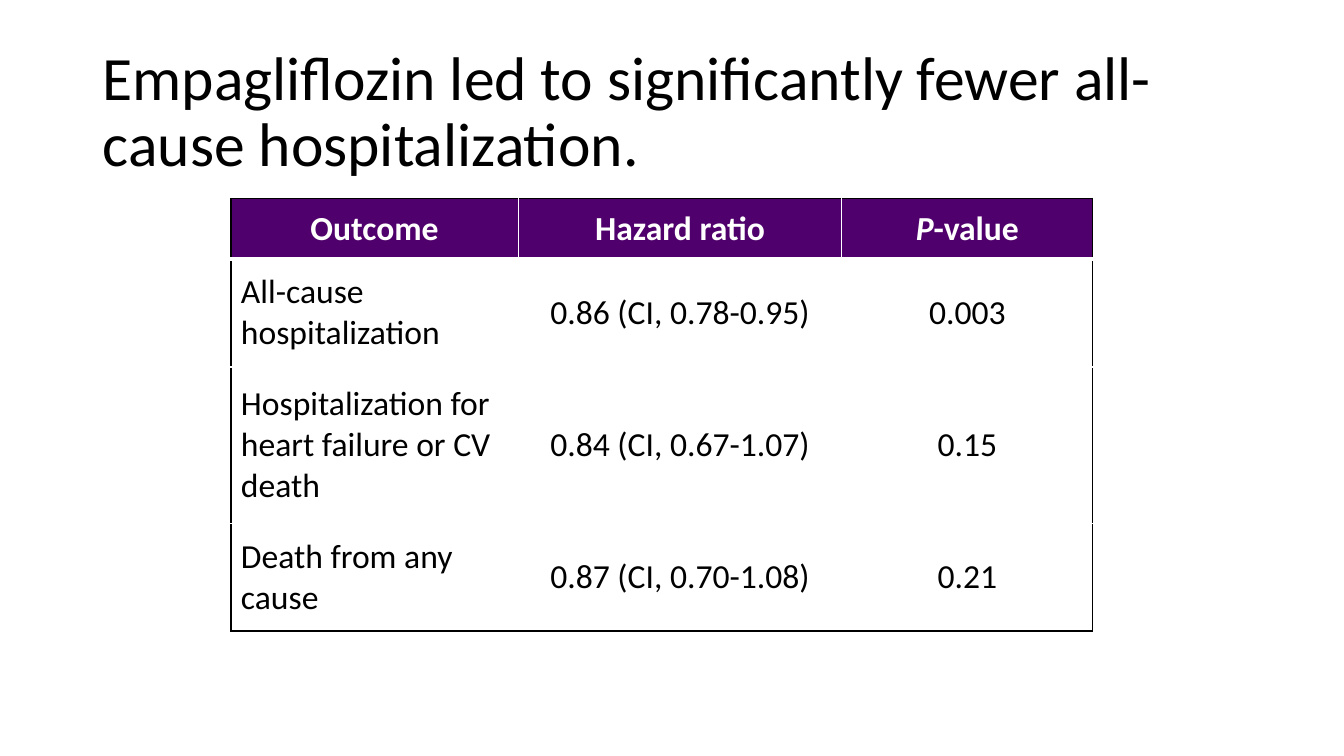
"""Build a slide with a table of empagliflozin trial outcomes."""
import pptx
import pptx.dml.color
import pptx.enum.text
import pptx.oxml
import pptx.oxml.ns
import pptx.util

THEME = {
    "font": "Calibri",
    "title": 44,
    "body": 24,
    "black": "000000",
    "white": "FFFFFF",
    "purple": "50006C",
}
ALIGN = pptx.enum.text.PP_ALIGN
MIDDLE = pptx.enum.text.MSO_ANCHOR.MIDDLE


def add_text(p, text, size=THEME["body"], color=THEME["black"],
             bold=False, italic=False, align=ALIGN.LEFT):
    p.alignment = align
    r = p.add_run()
    r.text = text
    r.font.name = THEME["font"]
    r.font.size = pptx.util.Pt(size)
    r.font.bold = bold
    r.font.italic = italic
    r.font.color.rgb = pptx.dml.color.RGBColor.from_string(color)


def add_border(cell, side, color, points):
    width = pptx.util.Pt(points)
    cell._tc.get_or_add_tcPr().append(pptx.oxml.parse_xml(
        f'<a:ln{side} {pptx.oxml.ns.nsdecls("a")} w="{width}"><a:solidFill>'
        f'<a:srgbClr val="{color}"/></a:solidFill></a:ln{side}>'))


prs = pptx.Presentation()
prs.slide_width = pptx.util.Inches(13.33)
prs.slide_height = pptx.util.Inches(7.5)
px = prs.slide_width / 100
py = prs.slide_height / 100
slide = prs.slides.add_slide(prs.slide_layouts[6])

sp = slide.shapes.add_textbox(int(6.9 * px), int(5.33 * py),
                              int(85.75 * px), int(19.33 * py))
tf = sp.text_frame
tf.word_wrap = True
tf.vertical_anchor = MIDDLE
tf.paragraphs[0].line_spacing = 0.9
add_text(tf.paragraphs[0],
         "Empagliflozin led to significantly fewer all-cause hospitalization.",
         size=THEME["title"])

outcomes = [
    ["Outcome", "Hazard ratio", "P-value"],
    ["All-cause hospitalization", "0.86 (CI, 0.78-0.95)", "0.003"],
    ["Hospitalization for heart failure or CV death", "0.84 (CI, 0.67-1.07)", "0.15"],
    ["Death from any cause", "0.87 (CI, 0.70-1.08)", "0.21"],
]
col_shares = [21.38, 24.08, 18.68]
row_shares = [8, 14.27, 20.67, 14.27]
last_row, last_col = len(row_shares) - 1, len(col_shares) - 1

table = slide.shapes.add_table(
    len(row_shares), len(col_shares), int(17.18 * px), int(26.27 * py),
    int(sum(col_shares) * px), int(sum(row_shares) * py)).table
table.first_row = False
table.horz_banding = False
for column, share in zip(table.columns, col_shares):
    column.width = int(share * px)
for row, share in zip(table.rows, row_shares):
    row.height = int(share * py)

for i, texts in enumerate(outcomes):
    for j, text in enumerate(texts):
        cell = table.cell(i, j)
        cell.vertical_anchor = MIDDLE
        header = i == 0
        outer_sides = {"L": j == 0, "R": j == last_col, "T": header, "B": i == last_row}
        for side, outer in outer_sides.items():
            under_header = (i, side) in [(0, "B"), (1, "T")]
            add_border(cell, side, THEME["black" if outer else "white"],
                       3 if under_header else 1)
        if header:
            cell.fill.solid()
            cell.fill.fore_color.rgb = pptx.dml.color.RGBColor.from_string(THEME["purple"])
        else:
            cell.fill.background()
        runs = ["P", "-value"] if text == "P-value" else [text]
        for part in runs:
            add_text(cell.text_frame.paragraphs[0], part, bold=header,
                     italic=part == "P",
                     color=THEME["white" if header else "black"],
                     align=ALIGN.CENTER if header or j > 0 else ALIGN.LEFT)

prs.save("out.pptx")
